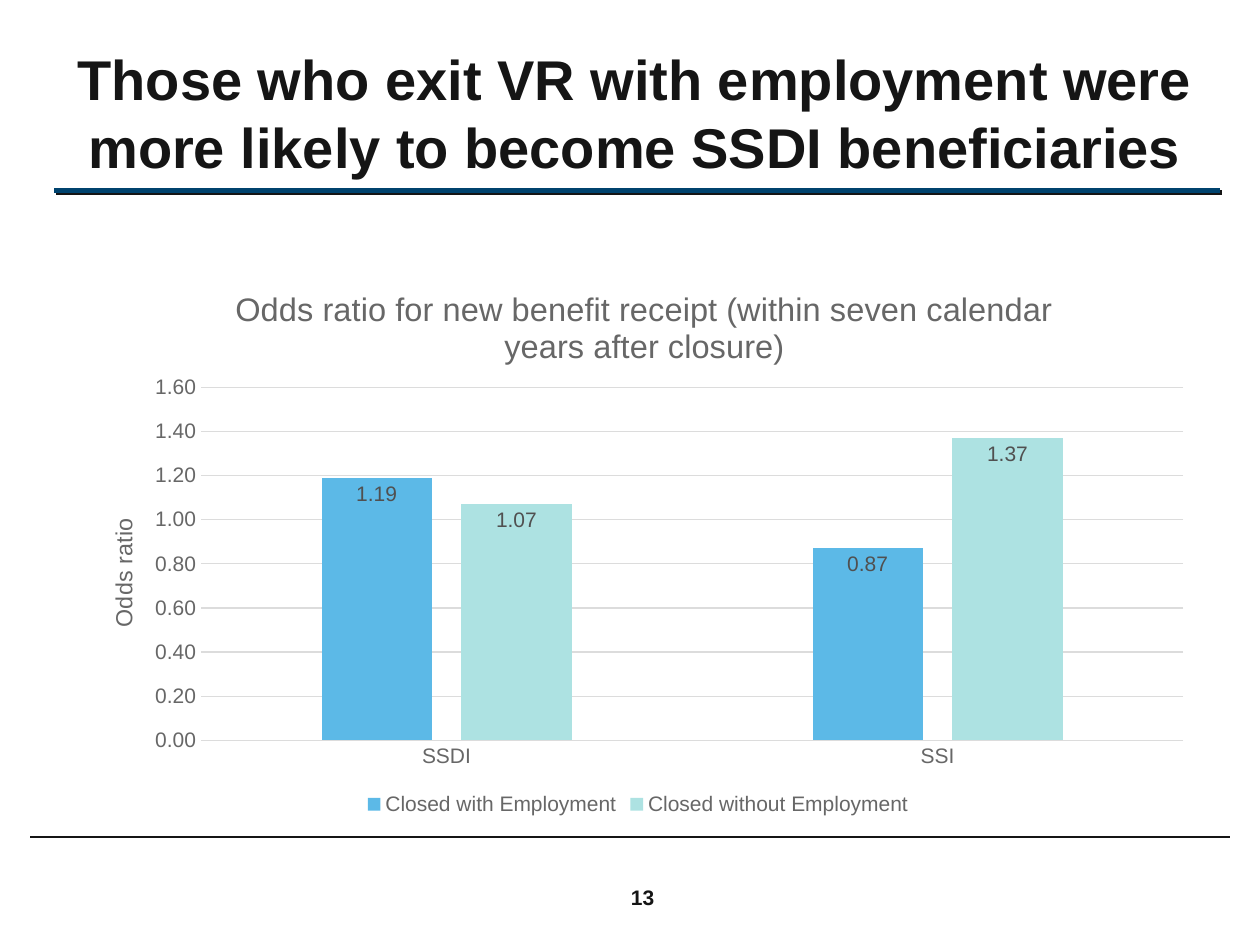
from lxml import etree
from pptx import Presentation
from pptx import util as u
from pptx.chart.data import CategoryChartData
from pptx.dml.color import RGBColor
from pptx.enum import chart as ch, shapes, text
from pptx.oxml import parse_xml
from pptx.oxml.ns import nsdecls, qn

INK, GREY, LABEL, GRID, NAVY = "151515", "676767", "505050", "DCDCDC", "00436E"


def rgb(value):
    return RGBColor.from_string(value)


def place(el, index, **fractions):
    """Give a chart part a manual layout, in fractions of the chart."""
    for old in el.findall(qn("c:layout")):
        el.remove(old)
    layout = etree.Element(qn("c:layout"))
    manual = etree.SubElement(layout, qn("c:manualLayout"))
    if "w" in fractions:
        etree.SubElement(manual, qn("c:layoutTarget")).set("val", "inner")
    for key in ("x", "y"):
        etree.SubElement(manual, qn(f"c:{key}Mode")).set("val", "edge")
    for key, value in fractions.items():
        etree.SubElement(manual, qn(f"c:{key}")).set("val", str(value))
    el.insert(index, layout)


class Deck:
    font = "Arial"

    def __init__(self, width, height):
        self.prs = Presentation()
        self.prs.slide_width, self.prs.slide_height = u.Cm(width), u.Cm(height)
        self.s = self.prs.slides.add_slide(self.prs.slide_layouts[6])

    def style(self, font, size, color, bold=False):
        font.name, font.size, font.bold = self.font, u.Pt(size), bold
        font.color.rgb = rgb(color)

    def rule(self, x1, x2, y, color, width, shadow=None):
        """Draw a horizontal line, with an offset hard shadow if a colour is given."""
        line = self.s.shapes.add_connector(
            shapes.MSO_CONNECTOR.STRAIGHT, u.Cm(x1), u.Cm(y), u.Cm(x2), u.Cm(y))
        line.line.color.rgb, line.line.width = rgb(color), u.Pt(width)
        effects = etree.SubElement(line._element.spPr, qn("a:effectLst"))
        if shadow:
            effects.append(parse_xml(
                f'<a:outerShdw {nsdecls("a")} dist="17780" dir="2700000">'
                f'<a:srgbClr val="{shadow}"/></a:outerShdw>'))

    def text(self, x, y, w, h, words, size, anchor):
        tf = self.s.shapes.add_textbox(u.Cm(x), u.Cm(y), u.Cm(w), u.Cm(h)).text_frame
        tf.word_wrap, tf.vertical_anchor = True, anchor
        p = tf.paragraphs[0]
        p.alignment = text.PP_ALIGN.CENTER
        r = p.add_run()
        r.text = words
        self.style(r.font, size, INK, True)

    def chart_title(self, title, words, size, x, y):
        p = title.text_frame.paragraphs[0]
        r = p.add_run()
        r.text = words
        self.style(r.font, size, GREY)
        place(title._element, 1, x=x, y=y)

    def columns(self, x, y, w, h, title, axis_title, cats, series):
        """Add a clustered column chart; series holds (name, colour, values)."""
        data = CategoryChartData(number_format="0.00")
        data.categories = cats
        for name, _, values in series:
            data.add_series(name, values)
        chart = self.s.shapes.add_chart(
            ch.XL_CHART_TYPE.COLUMN_CLUSTERED,
            u.Cm(x), u.Cm(y), u.Cm(w), u.Cm(h), data).chart
        self.style(chart.font, 12, GREY)
        self.chart_title(chart.chart_title, title, 18.6, 0.14, 0.05)
        chart.has_legend = True
        chart.legend.position = ch.XL_LEGEND_POSITION.BOTTOM
        chart.legend.include_in_layout = False
        self.style(chart.legend.font, 12, GREY)

        cat, val = chart.category_axis, chart.value_axis
        for axis in (cat, val):
            axis.major_tick_mark = axis.minor_tick_mark = ch.XL_TICK_MARK.NONE
            self.style(axis.tick_labels.font, 12, GREY)
        val.minimum_scale, val.maximum_scale, val.major_unit = 0, 1.6, 0.2
        val.tick_labels.number_format = "0.00"
        val.tick_labels.number_format_is_linked = False
        val.format.line.fill.background()
        for part in (cat, val.major_gridlines):
            part.format.line.color.rgb = rgb(GRID)
            part.format.line.width = u.Pt(0.75)
        self.chart_title(val.axis_title, axis_title, 13.3, 0.03, 0.46)
        body = val.axis_title.text_frame._txBody.find(qn("a:bodyPr"))
        body.set("rot", "-5400000")
        body.set("vert", "horz")

        plot = chart.plots[0]
        plot.gap_width, plot.overlap, plot.vary_by_categories = 219, -27, False
        for ser, (_, color, _) in zip(plot.series, series):
            ser.format.fill.solid()
            ser.format.fill.fore_color.rgb = rgb(color)
            labels = ser.data_labels
            labels.show_value = True
            labels.position = ch.XL_LABEL_POSITION.INSIDE_END
            labels.number_format, labels.number_format_is_linked = "0.00", False
            self.style(labels.font, 12, LABEL)
        place(chart._chartSpace.chart.plotArea, 0, x=0.115, y=0.236, w=0.865, h=0.623)


def main():
    deck = Deck(25.4, 19.05)
    deck.rule(1.09, 24.59, 3.84, NAVY, 3, shadow=INK)
    deck.rule(0.61, 24.79, 16.87, INK, 1.5)
    deck.text(12.27, 17.7, 1.37, 0.76, "13", 12, text.MSO_ANCHOR.MIDDLE)
    deck.columns(
        1.42, 5.11, 22.89, 11.43,
        "Odds ratio for new benefit receipt (within seven calendar years after closure)",
        "Odds ratio", ("SSDI", "SSI"),
        (("Closed with Employment", "5CB9E7", (1.19, 0.87)),
         ("Closed without Employment", "ADE2E2", (1.07, 1.37))))
    deck.text(1.07, 0.56, 23.47, 3.18,
              "Those who exit VR with employment were more likely to become SSDI beneficiaries",
              32, text.MSO_ANCHOR.BOTTOM)
    deck.prs.save("out.pptx")


if __name__ == "__main__":
    main()
